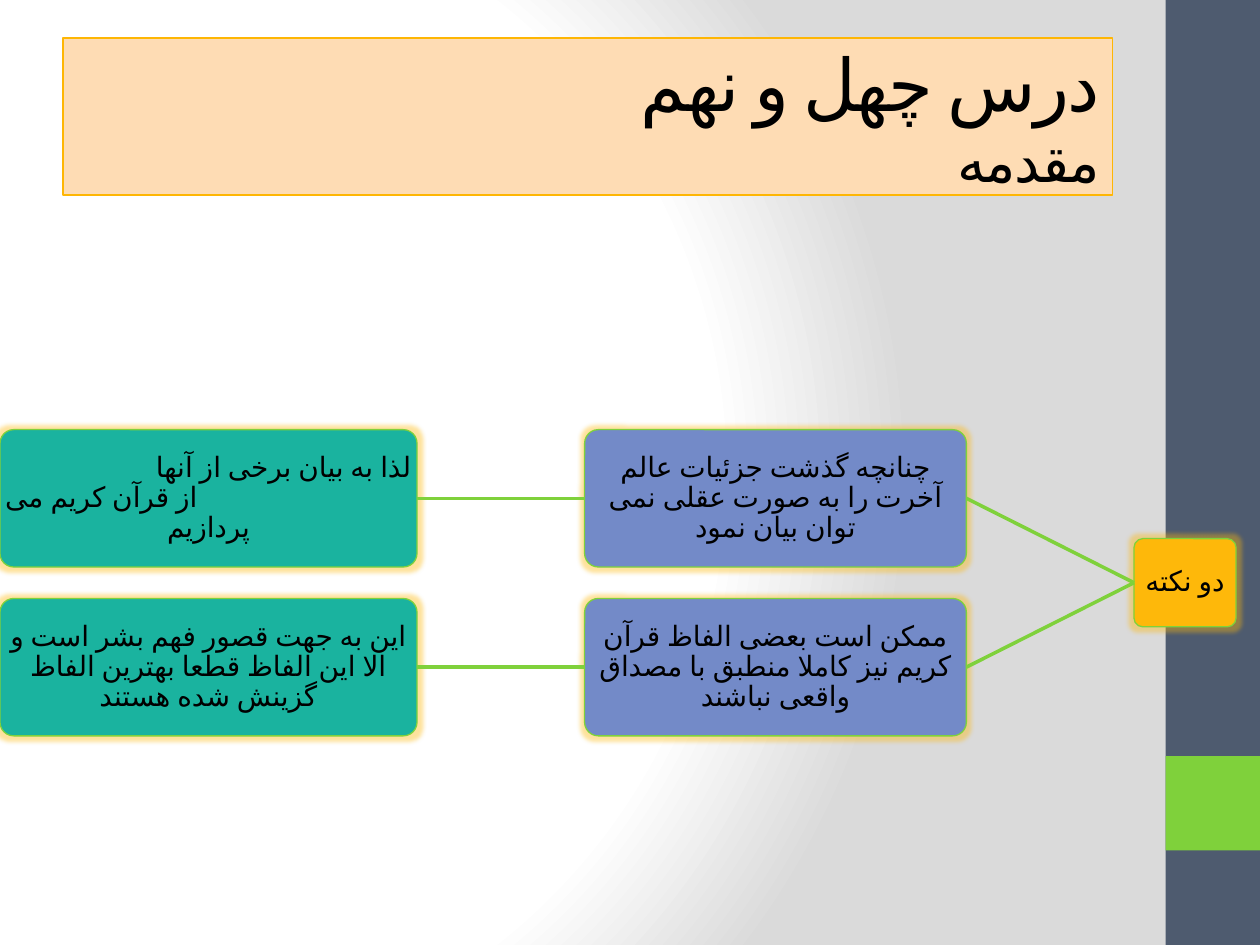
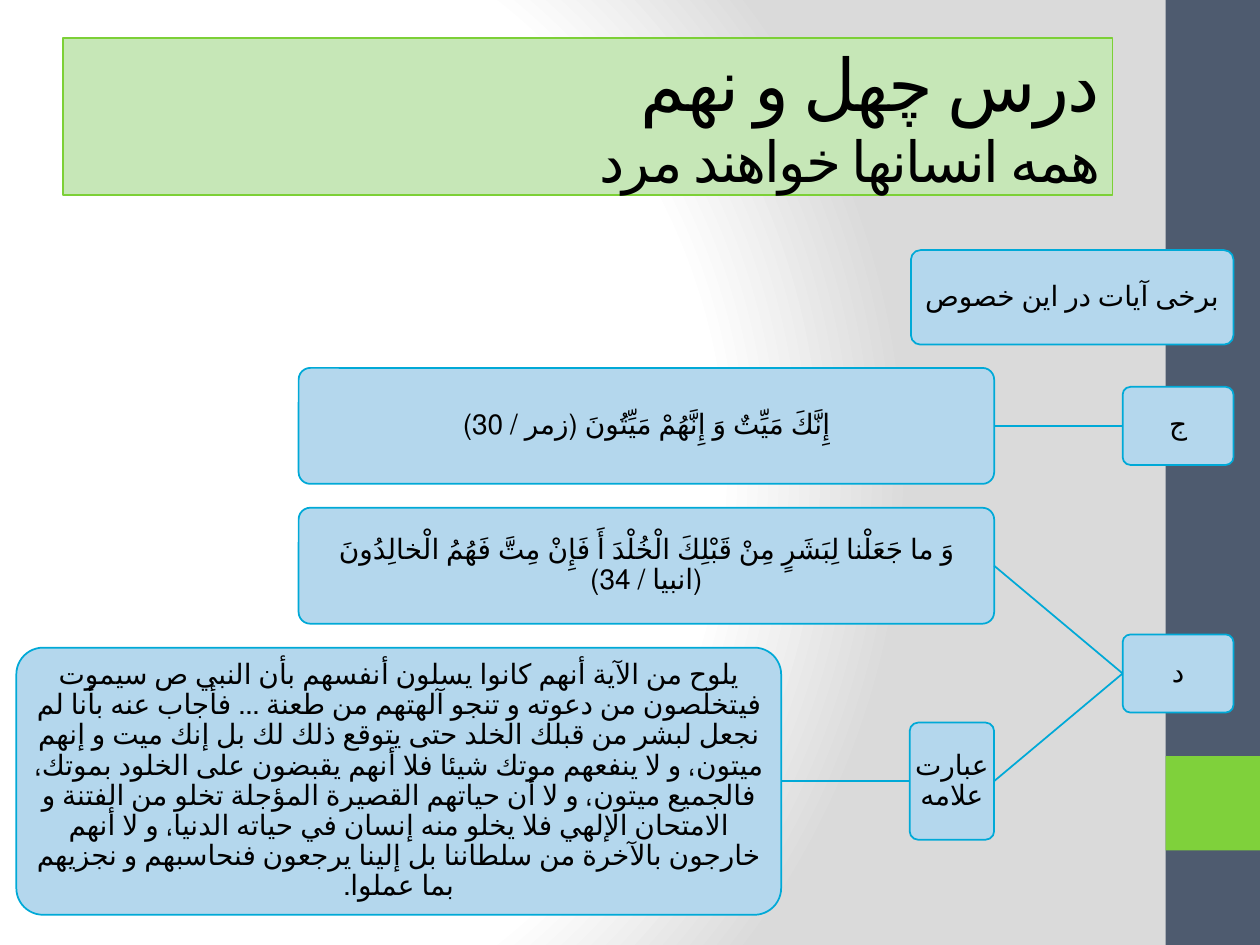
from lxml.etree import SubElement
from pptx import Presentation
from pptx.dml.color import RGBColor
from pptx.enum.lang import MSO_LANGUAGE_ID
from pptx.enum.shapes import MSO_CONNECTOR, MSO_SHAPE
from pptx.enum.text import MSO_ANCHOR, PP_ALIGN
from pptx.oxml import parse_xml
from pptx.oxml.ns import nsdecls, qn
from pptx.util import Inches, Pt

FONT = "Calibri"
BLACK, NAVY, GREEN = "000000", "4E5B6F", "7FD13B"
GOLD, PERIWINKLE, TEAL = "FEB80A", "738AC8", "1AB39F"
PALE_BLUE, CYAN = "B4D7ED", "00A9D7"
LESSON = "درس چهل و نهم"
TITLE_BOX = (0.5, 0.3, 8.33, 1.25)
NOTES_AREA = (0, 3.41, 9.81, 2.43)
VERSES_AREA = (0.13, 1.99, 9.66, 5.27)


def color(hex_string):
    """Turn a hex string into a colour."""
    return RGBColor.from_string(hex_string)


def write_text(paragraph, text, size=16, align=PP_ALIGN.CENTER, line_spacing=0.9, tracking=None):
    """Add a right-to-left run of Persian text to a paragraph."""
    paragraph.alignment = align
    paragraph.line_spacing = line_spacing
    paragraph._p.get_or_add_pPr().set("rtl", "1")
    run = paragraph.add_run()
    run.text = text
    run.font.name = FONT
    run.font.size = Pt(size)
    run.font.color.rgb = color(BLACK)
    run.font.language_id = MSO_LANGUAGE_ID.FARSI
    if tracking is not None:
        run._r.get_or_add_rPr().set("spc", str(tracking * 100))


def add_box(slide, box, fill, line=None, line_width=1, kind=MSO_SHAPE.RECTANGLE):
    """Draw a filled shape without a shadow."""
    shape = slide.shapes.add_shape(kind, *map(Inches, box))
    shape.shadow.inherit = False
    shape.fill.solid()
    shape.fill.fore_color.rgb = color(fill)
    if line:
        shape.line.color.rgb = color(line)
        shape.line.width = Pt(line_width)
    else:
        shape.line.fill.background()
    return shape


def add_glow(effects):
    """Put a soft golden glow in an effect list."""
    glow = SubElement(effects, qn("a:glow"), rad=str(Pt(5)))
    glow_color = SubElement(glow, qn("a:srgbClr"), val=GOLD)
    SubElement(glow_color, qn("a:alpha"), val="40000")


def add_node(slide, box, lines, fill=PALE_BLUE, line=CYAN, line_width=1, glow=False):
    """Draw a rounded box holding lines given as (text, alignment) or one text."""
    shape = add_box(slide, box, fill, line, line_width, MSO_SHAPE.ROUNDED_RECTANGLE)
    shape.adjustments[0] = 0.1
    frame = shape.text_frame
    frame.word_wrap = True
    frame.vertical_anchor = MSO_ANCHOR.MIDDLE
    frame.margin_left = frame.margin_right = Inches(0.01)
    frame.margin_top = frame.margin_bottom = Inches(0.01)
    if isinstance(lines, str):
        lines = [(lines, PP_ALIGN.CENTER)]
    for index, (text, align) in enumerate(lines):
        paragraph = frame.add_paragraph() if index else frame.paragraphs[0]
        write_text(paragraph, text, align=align)
    if glow:
        add_glow(shape._element.spPr.find(qn("a:effectLst")))
    return shape


def link(slide, parent, child, line=CYAN, line_width=1, glow=False):
    """Join the left side of a parent to the right side of its child."""
    connector = slide.shapes.add_connector(MSO_CONNECTOR.STRAIGHT, 0, 0, 0, 0)
    connector.begin_connect(parent, 1)
    connector.end_connect(child, 3)
    connector.line.color.rgb = color(line)
    connector.line.width = Pt(line_width)
    effects = SubElement(connector._element.spPr, qn("a:effectLst"))
    if glow:
        add_glow(effects)


def set_background(master):
    """Give every slide the round white-to-grey gradient."""
    master.background.fill.gradient()
    gradient = next(master.element.iter(qn("a:gradFill")))
    stops = "".join(
        f'<a:gs pos="{position}000"><a:srgbClr val="{shade}"/></a:gs>'
        for position, shade in ((0, "FFFFFF"), (75, "FFFFFF"), (100, "DADADA"))
    )
    gradient.getparent().replace(gradient, parse_xml(
        f'<a:gradFill {nsdecls("a")} rotWithShape="1"><a:gsLst>{stops}</a:gsLst><a:path path="circle">'
        '<a:fillToRect l="20000" t="50000" r="100000" b="50000"/></a:path></a:gradFill>'
    ))


def add_lesson_slide(presentation, subtitle, fill, line):
    """Add a slide with the side band and the lesson title."""
    slide = presentation.slides.add_slide(presentation.slide_layouts[6])
    add_box(slide, (9.25, 0, 0.75, 7.5), NAVY)
    add_box(slide, (9.25, 6, 0.75, 0.75), GREEN)
    frame = add_box(slide, TITLE_BOX, fill, line).text_frame
    frame.word_wrap = True
    frame.vertical_anchor = MSO_ANCHOR.MIDDLE
    paragraph = frame.paragraphs[0]
    title_format = {"align": PP_ALIGN.RIGHT, "line_spacing": 1.0, "tracking": -1}
    write_text(paragraph, LESSON, size=41.4, **title_format)
    paragraph.add_line_break()
    write_text(paragraph, subtitle, size=32.4, **title_format)
    return slide


def add_notes_tree(slide, area):
    """Draw the two notes, each with its consequence, from one root."""
    left, top, width, height = area
    row_height, pitch = 1.09, 1.34
    root_width, root_height = 0.81, 0.7
    node_format = {"line": GREEN, "line_width": 0.75, "glow": True}
    link_format = {"line": GREEN, "line_width": 2, "glow": True}
    root_box = (left + width - root_width, top + (height - root_height) / 2, root_width, root_height)
    root = add_node(slide, root_box, "دو نکته", GOLD, **node_format)
    rows = (
        ("چنانچه گذشت جزئیات عالم آخرت را به صورت عقلی نمی توان بیان نمود",
         (("لذا به بیان برخی از آنها", PP_ALIGN.RIGHT),
          ("از قرآن کریم می", PP_ALIGN.LEFT),
          ("پردازیم", PP_ALIGN.CENTER))),
        ("ممکن است بعضی الفاظ قرآن کریم نیز کاملا منطبق با مصداق واقعی نباشند",
         "این به جهت قصور فهم بشر است و الا این الفاظ قطعا بهترین الفاظ گزینش شده هستند"),
    )
    for index, (note_text, consequence_text) in enumerate(rows):
        row_top = top + index * pitch
        note = add_node(slide, (left + 4.64, row_top, 3.03, row_height), note_text, PERIWINKLE, **node_format)
        consequence = add_node(slide, (left, row_top, 3.31, row_height), consequence_text, TEAL, **node_format)
        link(slide, root, note, **link_format)
        link(slide, note, consequence, **link_format)


def add_verses_tree(slide, area):
    """Draw the heading, the two lettered verses and the commentary."""
    left, top, width, height = area
    right = left + width
    letter_width, letter_height = 0.88, 0.62
    verse_right, verse_width, verse_height = right - 1.9, 5.52, 0.92
    label_width, label_height = 0.67, 0.93
    commentary_width, commentary_height = 6.07, 2.12
    first_middle, second_middle = top + 1.39, top + 2.5
    commentary_middle = top + height - commentary_height / 2

    def node(node_right, middle, node_width, node_height, text):
        """Place a node by its right edge and vertical middle."""
        box = (node_right - node_width, middle - node_height / 2, node_width, node_height)
        return add_node(slide, box, text)

    node(right, top + 0.37, 2.56, 0.75, "برخی آیات در این خصوص")
    first_letter = node(right, first_middle, letter_width, letter_height, "ج")
    first_verse = node(verse_right, first_middle, verse_width, verse_height,
                       "إِنَّكَ مَيِّتٌ وَ إِنَّهُمْ مَيِّتُونَ (زمر / 30)")
    second_letter = node(right, (second_middle + commentary_middle) / 2, letter_width, letter_height, "د")
    second_verse = node(verse_right, second_middle, verse_width, verse_height,
                        "وَ ما جَعَلْنا لِبَشَرٍ مِنْ قَبْلِكَ الْخُلْدَ أَ فَإِنْ مِتَّ فَهُمُ الْخالِدُونَ (انبیا / 34)")
    label = node(verse_right, commentary_middle, label_width, label_height, "عبارت علامه")
    commentary = node(
        left + commentary_width, commentary_middle, commentary_width, commentary_height,
        "يلوح من الآية أنهم كانوا يسلون أنفسهم بأن النبي ص سيموت فيتخلصون من دعوته و تنجو آلهتهم "
        "من طعنة ... فأجاب عنه بأنا لم نجعل لبشر من قبلك الخلد حتى يتوقع ذلك لك بل إنك ميت و إنهم "
        "ميتون، و لا ينفعهم موتك شيئا فلا أنهم يقبضون على الخلود بموتك، فالجميع ميتون، و لا أن "
        "حياتهم القصيرة المؤجلة تخلو من الفتنة و الامتحان الإلهي فلا يخلو منه إنسان في حياته الدنيا، "
        "و لا أنهم خارجون بالآخرة من سلطاننا بل إلينا يرجعون فنحاسبهم و نجزيهم بما عملوا.",
    )
    for parent, child in ((first_letter, first_verse), (second_letter, second_verse),
                          (second_letter, label), (label, commentary)):
        link(slide, parent, child)


def main():
    """Build both slides and save them."""
    presentation = Presentation()
    presentation.slide_width, presentation.slide_height = Inches(10), Inches(7.5)
    set_background(presentation.slide_master)
    add_notes_tree(add_lesson_slide(presentation, "مقدمه", "FEDCB4", "FEB604"), NOTES_AREA)
    add_verses_tree(add_lesson_slide(presentation, "همه انسانها خواهند مرد", "C6E7B7", "7CD036"), VERSES_AREA)
    presentation.save("out.pptx")


if __name__ == "__main__":
    main()
